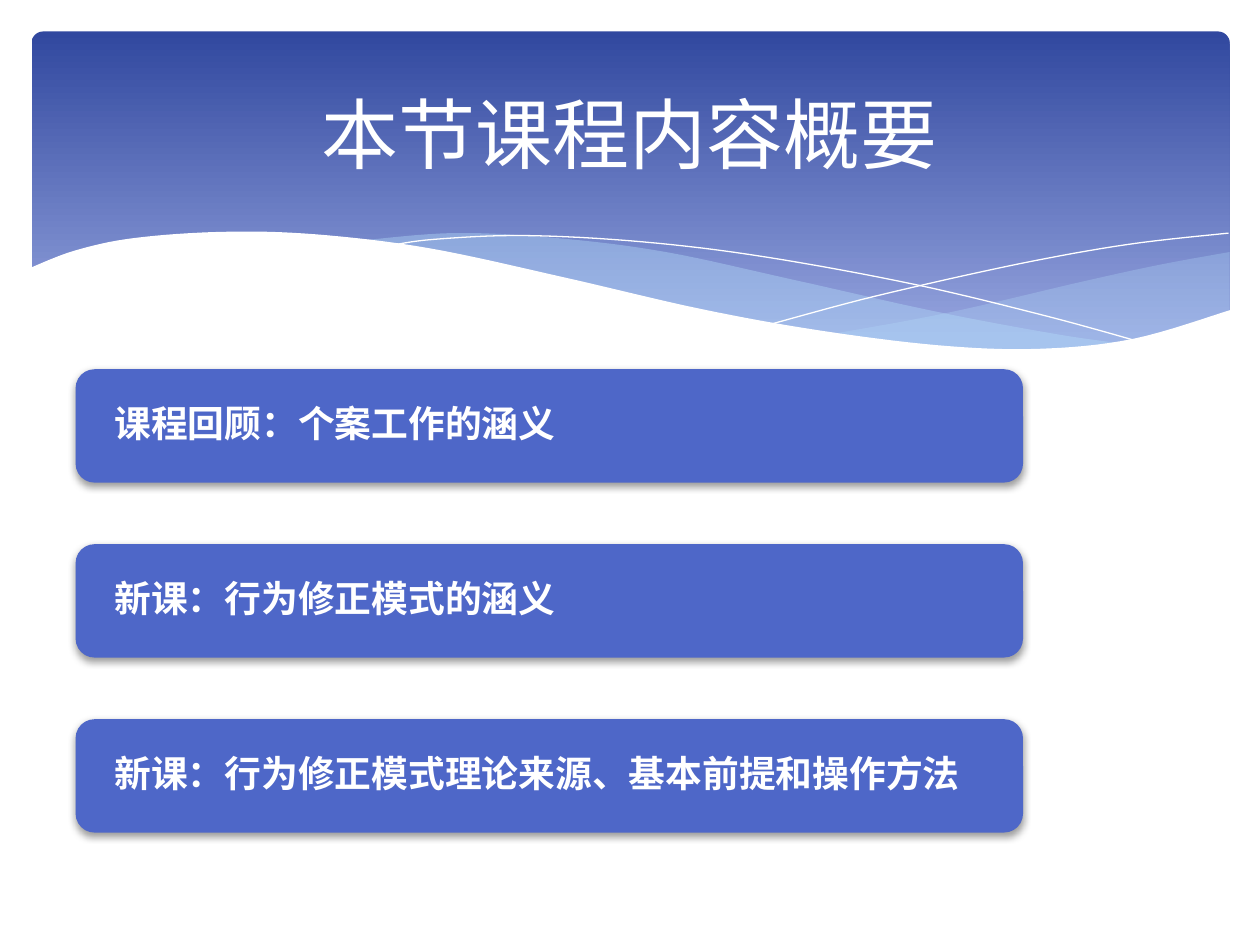
from dataclasses import dataclass

from lxml import etree
from pptx import Presentation
from pptx import util as u
from pptx.dml.color import RGBColor
from pptx.enum import shapes, text
from pptx.oxml import ns

COLORS = {
    "white": "FFFFFF",
    "header_top": "31489F",
    "header_bottom": "95A4DE",
    "wave": "B4DCFA",
    "card": "4E67C8",
    "shadow": "000000",
}
FONT = "Calibri"
STEPS = 8

Point = tuple[float, float]


@dataclass
class Wave:
    edges: list[list[Point]]
    fill: str | None = None
    opacity: int = 100


@dataclass
class Card:
    label: str
    top: float


WAVES = [
    Wave(
        [
            [(475.9, 190.8), (542.2, 178.6), (619.9, 160.6), (663.1, 151.2), (702.7, 144)],
            [(702.7, 177.8), (668.2, 189.4), (627.8, 197.3), (578.2, 200.2), (527, 197.3), (475.9, 190.8)],
        ],
        "wave",
        29,
    ),
    Wave(
        [
            [(205.9, 137.5), (259.9, 133.2), (318.2, 136.1), (380.2, 144),
             (452.9, 159.8), (533.5, 177.8), (602.6, 190.8), (643, 196.6)],
            [(643, 196.6), (603.4, 200.2), (556.6, 199.4), (489.6, 193),
             (407.5, 178.6), (323.3, 159.8), (260.6, 146.2), (205.9, 137.5)],
        ],
        "wave",
        40,
    ),
    Wave([[(222.5, 140.4), (247.7, 136.8), (299.5, 134.6), (367.2, 138.2),
           (437.8, 146.9), (523.4, 162.7), (598.3, 180.7), (653, 195.8)]]),
    Wave([[(441.4, 185), (500.4, 169.2), (580.3, 151.2), (644.4, 139.7), (702, 133.2)]]),
    Wave(
        [
            [(16.6, 153.4), (42.5, 143.3), (76.3, 136.1), (127.4, 132.5), (180, 133.9),
             (244.8, 141.8), (321.8, 158.4), (399.6, 176.4), (466.6, 188.6),
             (535.7, 197.3), (592.6, 199.4), (647.3, 193.7), (703.4, 177.1)],
            [(703.4, 236.9), (16.6, 236.9)],
        ],
        "white",
    ),
]

LABELS = [
    "课程回顾：个案工作的涵义",
    "新课：行为修正模式的涵义",
    "新课：行为修正模式理论来源、基本前提和操作方法",
]
CARDS = [Card(label, 211 + 100 * row) for row, label in enumerate(LABELS)]


def color(name: str) -> RGBColor:
    return RGBColor.from_string(COLORS[name])


def smooth_edge(knots: list[Point]) -> list[Point]:
    padded = [knots[0], *knots, knots[-1]]
    curve = [knots[0]]
    for before, start, end, after in zip(padded, padded[1:], padded[2:], padded[3:]):
        for step in range(1, STEPS + 1):
            t = step / STEPS
            curve.append(tuple(
                (2 * b + (c - a) * t + (2 * a - 5 * b + 4 * c - d) * t**2
                 + (3 * b - a - 3 * c + d) * t**3) / 2
                for a, b, c, d in zip(before, start, end, after)
            ))
    return curve


def draw_header(page) -> None:
    header = page.shapes.add_shape(
        shapes.MSO_SHAPE.ROUNDED_RECTANGLE, u.Pt(18), u.Pt(18), u.Pt(684.7), u.Pt(194.4)
    )
    header.adjustments[0] = 0.034
    header.shadow.inherit = False
    header.line.fill.background()
    header.fill.gradient()
    header.fill.gradient_angle = 270
    stops = header.fill.gradient_stops
    for stop, name, position in zip(stops, ("header_top", "header_bottom"), (0, 0.9)):
        stop.color.rgb = color(name)
        stop.position = position


def draw_wave(page, wave: Wave) -> None:
    points = [
        (u.Pt(x), u.Pt(y)) for edge in wave.edges for x, y in smooth_edge(edge)
    ]
    builder = page.shapes.build_freeform(*points[0])
    builder.add_line_segments(points[1:], close=wave.fill is not None)
    outline = builder.convert_to_shape()
    outline.shadow.inherit = False
    if wave.fill is None:
        outline.fill.background()
        outline.line.color.rgb = color("white")
        outline.line.width = u.Pt(0)
        return
    outline.line.fill.background()
    outline.fill.solid()
    outline.fill.fore_color.rgb = color(wave.fill)
    if wave.opacity < 100:
        tint = outline.element.spPr.find(".//" + ns.qn("a:srgbClr"))
        etree.SubElement(tint, ns.qn("a:alpha"), val=str(wave.opacity * 1000))


def add_shadow(shape) -> None:
    shape.shadow.inherit = False
    effects = shape.element.spPr.find(ns.qn("a:effectLst"))
    shadow = etree.SubElement(
        effects, ns.qn("a:outerShdw"), blurRad=str(u.Pt(4)), dist=str(u.Pt(2)),
        dir="5400000", rotWithShape="0",
    )
    tint = etree.SubElement(shadow, ns.qn("a:srgbClr"), val=COLORS["shadow"])
    etree.SubElement(tint, ns.qn("a:alpha"), val="38000")


def format_para(para, size: float, bold: bool, alignment) -> None:
    para.alignment = alignment
    para.font.name = FONT
    para.font.size = u.Pt(size)
    para.font.bold = bold
    para.font.color.rgb = color("white")


def draw_card(page, card: Card) -> None:
    box = page.shapes.add_shape(
        shapes.MSO_SHAPE.ROUNDED_RECTANGLE, u.Pt(43.2), u.Pt(card.top), u.Pt(541.4), u.Pt(64.8)
    )
    box.fill.solid()
    box.fill.fore_color.rgb = color("card")
    box.line.fill.background()
    add_shadow(box)
    frame = box.text_frame
    frame.word_wrap = True
    frame.vertical_anchor = text.MSO_ANCHOR.MIDDLE
    frame.margin_left = frame.margin_right = u.Pt(19)
    frame.margin_top = frame.margin_bottom = 0
    para = frame.paragraphs[0]
    para.text = card.label
    para.line_spacing = 0.9
    format_para(para, 21, True, text.PP_ALIGN.LEFT)


def place_title(page, wording: str) -> None:
    title = page.shapes.title
    title.left, title.top = u.Pt(36), u.Pt(26.6)
    title.width, title.height = u.Pt(648), u.Pt(98.6)
    frame = title.text_frame
    frame.text = wording
    frame.vertical_anchor = text.MSO_ANCHOR.MIDDLE
    format_para(frame.paragraphs[0], 44, False, text.PP_ALIGN.CENTER)
    title.element.getparent().append(title.element)


def main() -> None:
    deck = Presentation()
    deck.slide_width, deck.slide_height = u.Pt(720), u.Pt(540)
    page = deck.slides.add_slide(deck.slide_layouts.get_by_name("Title Only"))
    draw_header(page)
    for wave in WAVES:
        draw_wave(page, wave)
    for card in CARDS:
        draw_card(page, card)
    place_title(page, "本节课程内容概要")
    deck.save("out.pptx")


if __name__ == "__main__":
    main()
